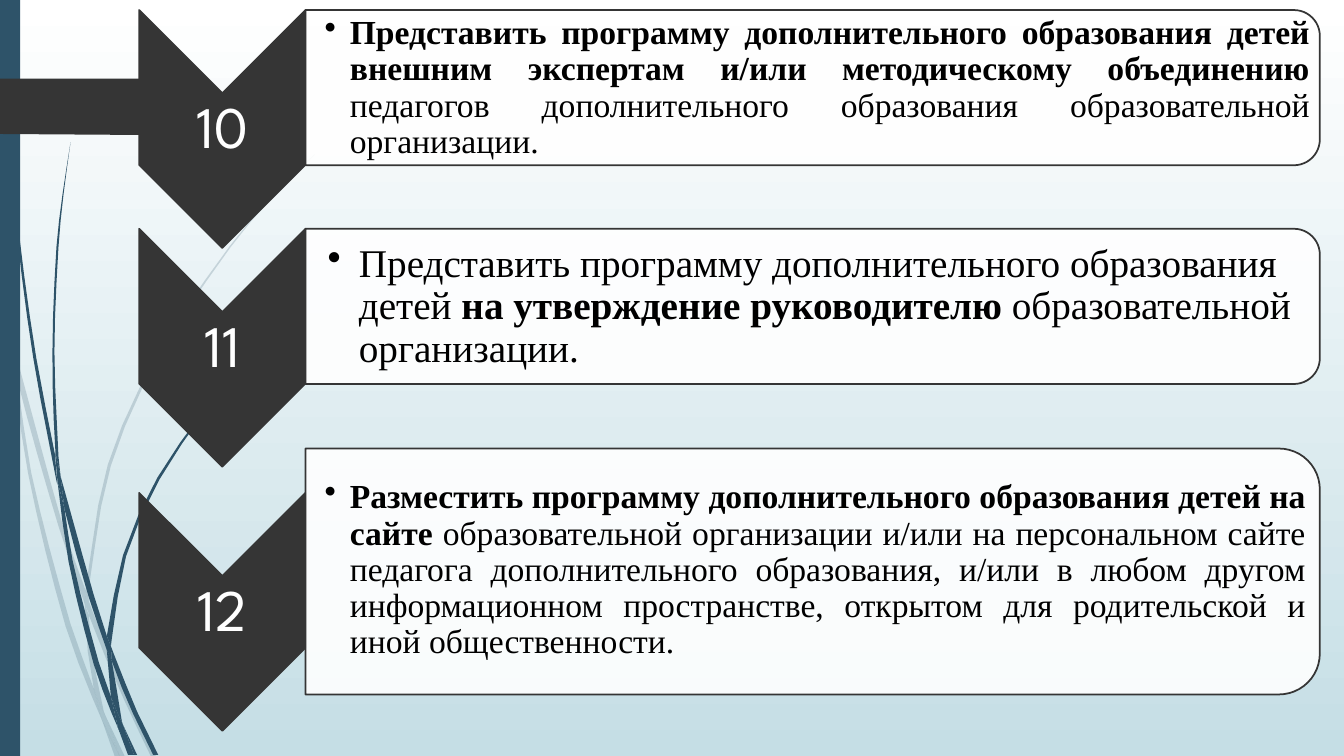
from math import ceil, hypot

from lxml import etree
from pptx import Presentation
from pptx.dml.color import RGBColor
from pptx.enum.shapes import MSO_SHAPE
from pptx.enum.text import MSO_ANCHOR, PP_ALIGN
from pptx.oxml.ns import qn
from pptx.util import Emu, Pt

PX = 9144  # EMU in one px, 100 px to the inch
SLIDE_W, SLIDE_H = 1333, 750

WHITE = RGBColor(0xFF, 0xFF, 0xFF)
BLACK = RGBColor(0x00, 0x00, 0x00)
DARK = RGBColor(0x35, 0x35, 0x35)
BLUE = RGBColor(0x2E, 0x53, 0x69)
PALE = RGBColor(0xC5, 0xDE, 0xE5)

BODY_FONT = "Times New Roman"
NUMBER_FONT = "League Spartan"

# Grass blades: the two edges of each, the second running back to the start
PALE_BLADES = [
    ([(11, 350), (9, 322), (0, 282)], [(0, 299), (10, 344), (11, 350)]),
    ([(14, 345), (17, 376), (58, 522), (84, 599)], [(85, 586), (62, 520), (14, 345)]),
    ([(88, 596), (88, 610), (123, 694), (150, 751)],
     [(155, 751), (127, 692), (92, 607), (88, 596)]),
    ([(105, 711), (119, 751)], [(124, 751), (105, 711)]),
    ([(11, 350), (28, 470), (65, 621), (92, 693), (101, 714)],
     [(99, 707), (93, 683), (70, 619), (31, 469), (17, 376), (11, 350)]),
    ([(84, 599), (87, 646), (93, 683), (96, 692), (105, 711)],
     [(103, 706), (91, 646), (88, 610), (84, 599)]),
    ([(88, 596), (88, 584), (110, 462), (160, 349), (229, 245), (268, 198),
      (290, 175), (312, 154)],
     [(312, 153), (289, 175), (268, 197), (228, 244), (158, 348), (107, 461),
      (85, 584), (85, 586)]),
    ([(101, 714), (114, 751)], [(119, 751), (101, 714)]),
    ([(88, 608), (88, 596), (85, 586)], [(84, 599), (88, 608)]),
    ([(93, 683), (99, 707), (101, 714), (119, 751)],
     [(105, 711), (96, 692), (93, 683)]),
]
DARK_BLADES = [
    ([(3, 0), (4, 48), (7, 110), (17, 233), (33, 355), (56, 477), (57, 481)],
     [(55, 457), (55, 453), (36, 355), (19, 232), (8, 109), (5, 48), (4, 0)]),
    ([(60, 472), (64, 505), (88, 592), (106, 645)],
     [(106, 633), (106, 631), (93, 590), (60, 472)]),
    ([(110, 641), (111, 656), (132, 708), (152, 749)],
     [(157, 749), (136, 706), (113, 649), (110, 641)]),
    ([(57, 477), (68, 557), (93, 659), (111, 708), (117, 722)],
     [(116, 717), (110, 691), (98, 657), (72, 556), (64, 505), (57, 477)]),
    ([(70, 141), (62, 193), (56, 245), (52, 349), (55, 449), (60, 472)],
     [(58, 453), (54, 349), (58, 245), (63, 193), (70, 141)]),
    ([(122, 719), (133, 749)], [(136, 749), (122, 719)]),
    ([(55, 449), (55, 453), (57, 477), (64, 505)], [(60, 472), (55, 449)]),
    ([(110, 641), (111, 633), (125, 552), (158, 476), (205, 406), (231, 374),
      (245, 359), (261, 344)],
     [(260, 344), (245, 358), (231, 373), (204, 405), (156, 474), (122, 551),
      (106, 631)]),
    ([(117, 722), (127, 749)], [(131, 749), (117, 722)]),
    ([(106, 645), (110, 691), (116, 706), (122, 719)],
     [(121, 716), (111, 656), (109, 651), (106, 645)]),
    ([(106, 631), (106, 645), (111, 656)], [(110, 641), (106, 631)]),
    ([(110, 691), (116, 717), (117, 722), (130, 749), (133, 749)],
     [(122, 719), (116, 706), (110, 691)]),
]
TAG = [(0, 78), (146, 78), (148, 79), (173, 104), (174, 106), (173, 108),
       (148, 133), (146, 134), (0, 133)]

# number, chevron top, panel (top, height), text (top, width, height),
# left inset, indent, size, alignment, runs (text, bold)
STEPS = [
    ("10", 10, (10, 154), (18, 998, 139), 19, 25, 24, PP_ALIGN.JUSTIFY, [
        ("Представить программу дополнительного образования детей внешним "
         "экспертам и/или методическому объединению ", True),
        ("педагогов дополнительного образования образовательной организации.", False)]),
    ("11", 227, (227, 154), (235, 998, 139), 22, 31, 28, PP_ALIGN.LEFT, [
        ("Представить программу дополнительного образования детей ", False),
        ("на утверждение руководителю ", True),
        ("образовательной организации.", False)]),
    ("12", 489, (445, 244), (456, 994, 220), 19, 25, 24, PP_ALIGN.JUSTIFY, [
        ("Разместить программу дополнительного образования детей на сайте ", True),
        ("образовательной организации и/или на персональном сайте педагога "
         "дополнительного образования, и/или в любом другом информационном "
         "пространстве, открытом для родительской и иной общественности.", False)]),
]


def px(n):
    return Emu(round(n * PX))


def paint(sp, fill, alpha=100, line=None):
    sp.shadow.inherit = False
    sp.fill.solid()
    sp.fill.fore_color.rgb = fill
    if alpha < 100:
        clr = sp.fill._xPr.find(".//" + qn("a:srgbClr"))
        etree.SubElement(clr, qn("a:alpha"), val=str(alpha * 1000))
    if line is None:
        sp.line.fill.background()
    else:
        sp.line.color.rgb = line
        sp.line.width = Pt(1.25)


def smooth(points, stride=50):
    """Points along a soft curve, one or more for each stride of its length."""
    last = len(points) - 1
    tangents = []
    for i in range(last + 1):
        (x0, y0), (x1, y1) = points[max(i - 1, 0)], points[min(i + 1, last)]
        size = hypot(x1 - x0, y1 - y0)
        tangents.append(((x1 - x0) / size, (y1 - y0) / size))
    curve = [points[0]]
    for i in range(last):
        p0, p3 = points[i], points[i + 1]
        length = hypot(p3[0] - p0[0], p3[1] - p0[1])
        p1 = [a + length / 3 * t for a, t in zip(p0, tangents[i])]
        p2 = [a - length / 3 * t for a, t in zip(p3, tangents[i + 1])]
        steps = ceil(length / stride)
        for k in range(1, steps + 1):
            t = k / steps
            u = 1 - t
            curve.append(tuple(u**3 * a + 3 * u * u * t * b + 3 * u * t * t * c + t**3 * d
                               for a, b, c, d in zip(p0, p1, p2, p3)))
    return curve


def add_outline(s, points, fill, alpha=100):
    corners = [(px(x), px(y)) for x, y in points]
    builder = s.shapes.build_freeform(*corners[0])
    builder.add_line_segments(corners[1:], close=True)
    paint(builder.convert_to_shape(), fill, alpha)


def add_turned(s, kind, x, y, w, h, fill, alpha=100):
    """A shape turned by 90 degrees that covers the box x, y, w, h."""
    shift = (w - h) / 2
    sp = s.shapes.add_shape(kind, px(x + shift), px(y - shift), px(h), px(w))
    sp.rotation = 90
    paint(sp, fill, alpha, DARK)


def add_text(s, box, insets, runs, font, size, color, align):
    tf = s.shapes.add_textbox(*map(px, box)).text_frame
    tf.word_wrap = True
    tf.vertical_anchor = MSO_ANCHOR.MIDDLE
    tf.margin_left, tf.margin_top, tf.margin_right, tf.margin_bottom = map(px, insets)
    p = tf.paragraphs[0]
    p.alignment = align
    p.line_spacing = 0.9
    for text, bold in runs:
        r = p.add_run()
        r.text = text
        r.font.name, r.font.size, r.font.bold = font, Pt(size), bold
        r.font.color.rgb = color
    return p


def add_bullet(p, indent):
    pPr = p._p.get_or_add_pPr()
    pPr.set("marL", str(px(indent)))
    pPr.set("indent", str(-px(indent)))
    etree.SubElement(pPr, qn("a:buChar"), char="•")


def add_step(s, number, chevron_top, panel, text, inset, indent, size, align, runs):
    add_turned(s, MSO_SHAPE.CHEVRON, 138, chevron_top, 165, 236, DARK)
    add_text(s, (138, chevron_top + 83, 165, 71), (3, 3, 3, 3), [(number, False)],
             NUMBER_FONT, 42, WHITE, PP_ALIGN.CENTER)
    add_turned(s, MSO_SHAPE.ROUND_2_SAME_RECTANGLE, 303, panel[0], 1006, panel[1],
               WHITE, 90)
    p = add_text(s, (303, *text), (inset, 2, 2, 2), runs, BODY_FONT, size, BLACK, align)
    add_bullet(p, indent)


def main():
    prs = Presentation()
    prs.slide_width, prs.slide_height = px(SLIDE_W), px(SLIDE_H)
    s = prs.slides.add_slide(prs.slide_layouts[6])

    # Background
    fill = s.background.fill
    fill.gradient()
    fill.gradient_angle = 270
    for stop, color, position in zip(fill.gradient_stops, (WHITE, PALE), (0, 1)):
        stop.color.rgb, stop.position = color, position

    # Grass, side bar and tag
    for blades, alpha in ((PALE_BLADES, 20), (DARK_BLADES, 100)):
        for out, back in blades:
            add_outline(s, smooth(out) + smooth(back), BLUE, alpha)
    bar = s.shapes.add_shape(MSO_SHAPE.RECTANGLE, 0, 0, px(20), px(SLIDE_H))
    paint(bar, BLUE)
    add_outline(s, TAG, DARK)

    # Numbered steps
    for step in STEPS:
        add_step(s, *step)

    prs.save("out.pptx")


if __name__ == "__main__":
    main()
